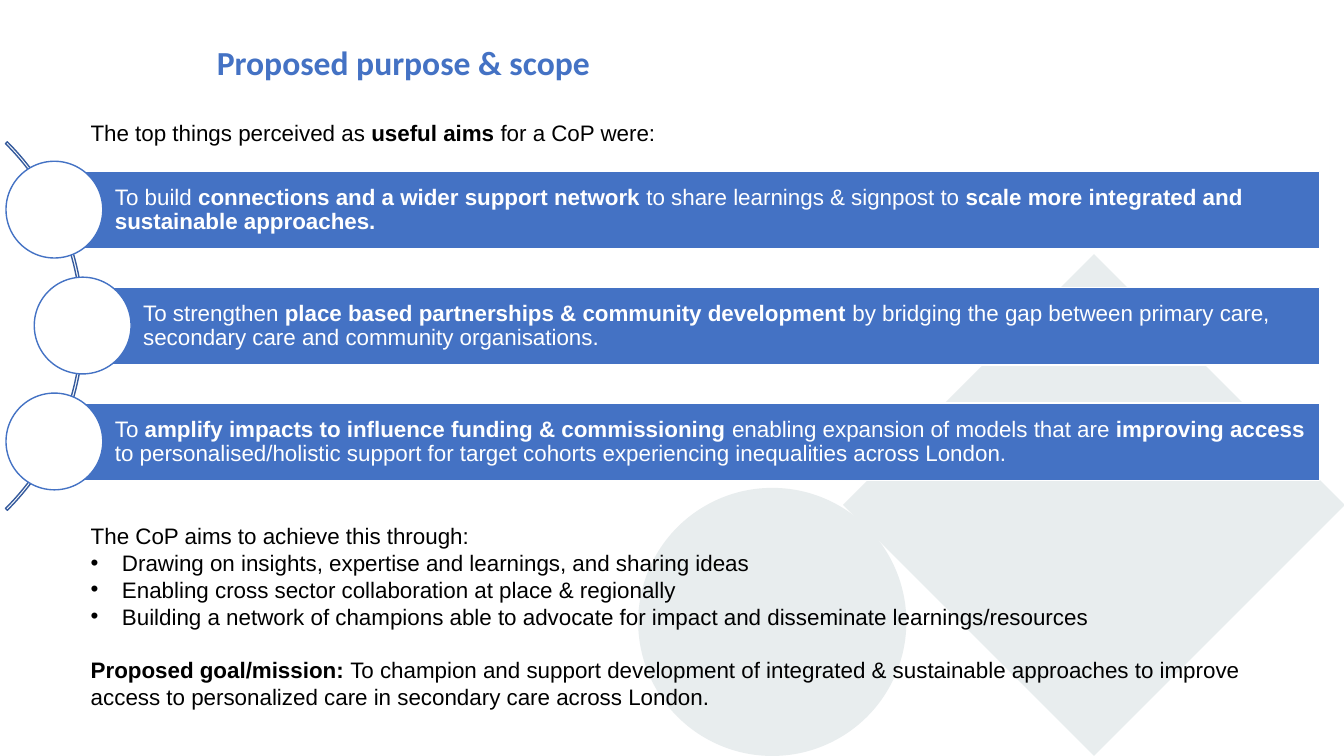
from lxml import etree
from pptx import Presentation
from pptx.dml.color import RGBColor
from pptx.enum.shapes import MSO_SHAPE
from pptx.enum.text import MSO_ANCHOR, MSO_AUTO_SIZE, PP_ALIGN
from pptx.oxml.ns import qn
from pptx.util import Emu, Pt

RECT, OVAL, ARC = MSO_SHAPE.RECTANGLE, MSO_SHAPE.OVAL, MSO_SHAPE.BLOCK_ARC
TOP, MIDDLE = MSO_ANCHOR.TOP, MSO_ANCHOR.MIDDLE
FIXED, LEFT = MSO_AUTO_SIZE.NONE, PP_ALIGN.LEFT

BLUE, DARK_BLUE, WHITE, BLACK, PALE = "4472C4", "365B9D", "FFFFFF", "000000", "E8EDEE"
TEXT = {"name": "Arial", "size": Pt(16)}
HEADING = {"name": "Calibri", "size": Pt(24)}


def px(length):
    """100 px to the inch."""
    return Emu(length * 9144)


def color(hex_string):
    return RGBColor.from_string(hex_string)


class SlideBuilder:
    def __init__(self, slide):
        self.slide = slide
        self.backdrop_count = 0

    def shape(self, preset, box, fill=None, line=None, rotation=0):
        item = self.slide.shapes.add_shape(preset, *map(px, box))
        item.shadow.inherit = False
        item.rotation = rotation
        if fill:
            item.fill.solid()
            item.fill.fore_color.rgb = color(fill)
        else:
            item.fill.background()
        if line:
            item.line.color.rgb = color(line)
            item.line.width = Pt(1)
        else:
            item.line.fill.background()
        return item

    def backdrop(self, preset, box, rotation=0):
        item = self.shape(preset, box, PALE, rotation=rotation)
        self.slide.shapes._spTree.insert(2 + self.backdrop_count, item._element)
        self.backdrop_count += 1

    def place(self, item, box):
        for side, length in zip(("left", "top", "width", "height"), box):
            setattr(item, side, px(length))

    def frame(self, item, wrap=True, anchor=TOP, insets=(10, 5, 10, 5)):
        settings = {"word_wrap": wrap, "auto_size": FIXED, "vertical_anchor": anchor}
        for side, inset in zip(("left", "top", "right", "bottom"), insets):
            settings["margin_" + side] = px(inset)
        for key, value in settings.items():
            setattr(item.text_frame, key, value)
        return item.text_frame

    def paragraph(self, frame, runs, style=TEXT, ink=BLACK, first=False,
                  bullet=False, margin=0, before=0, spacing=1.0):
        para = frame.paragraphs[0] if first else frame.add_paragraph()
        props = para._p.get_or_add_pPr()
        props.set("marL", str(px(margin)))
        props.set("indent", str(px(-margin if bullet else 0)))
        if bullet:
            etree.SubElement(props, qn("a:buFont")).set("typeface", "Arial")
            etree.SubElement(props, qn("a:buChar")).set("char", "•")
        else:
            etree.SubElement(props, qn("a:buNone"))
        layout = {"alignment": LEFT, "space_before": Pt(before),
                  "space_after": Pt(0), "line_spacing": spacing}
        for key, value in layout.items():
            setattr(para, key, value)
        for words, bold in runs:
            run = para.add_run()
            run.text = words
            for key, value in {**style, "bold": bold}.items():
                setattr(run.font, key, value)
            run.font.color.rgb = color(ink)

    def aim(self, left, top, runs):
        bar = self.shape(RECT, (left, top, 1309 - left, 77), BLUE, WHITE)
        frame = self.frame(bar, anchor=MIDDLE, insets=(61, 4, 4, 4))
        self.paragraph(frame, runs, ink=WHITE, first=True, spacing=0.9)
        self.shape(OVAL, (left - 47, top - 10, 96, 96), WHITE, BLUE)


AIMS = [
    [("To build ", False), ("connections and a wider support network ", True),
     ("to share learnings & signpost to ", False),
     ("scale more integrated and sustainable approaches.", True)],
    [("To strengthen ", False),
     ("place based partnerships & community development ", True),
     ("by bridging the gap between primary care, secondary care and "
      "community organisations.", False)],
    [("To ", False), ("amplify impacts to influence funding & commissioning ", True),
     ("enabling expansion of models that are", False), (" improving access", True),
     (" to personalised/holistic support for target cohorts experiencing "
      "inequalities across London.", False)],
]
METHODS = [
    "Drawing on insights, expertise and learnings, and sharing ideas",
    "Enabling cross sector collaboration at place & regionally",
    "Building a network of champions able to advocate for impact and "
    "disseminate learnings/resources",
]


def main():
    deck = Presentation()
    deck.slide_width, deck.slide_height = px(1333), px(750)
    slide = deck.slides.add_slide(deck.slide_layouts[1])
    builder = SlideBuilder(slide)

    # Backdrop
    builder.backdrop(OVAL, (633, 484, 266, 266))
    builder.backdrop(RECT, (909, 325, 352, 352), rotation=45)

    # Title
    title = slide.shapes.title
    builder.place(title, (195, 37, 404, 50))
    builder.paragraph(builder.frame(title, wrap=False),
                      [("Proposed purpose & scope", True)],
                      HEADING, BLUE, first=True, margin=10)

    # Introduction
    intro = slide.shapes.add_textbox(*map(px, (80, 113, 1219, 37)))
    builder.paragraph(builder.frame(intro),
                      [("The top things perceived as ", False), ("useful aims ", True),
                       ("for a CoP were:", False)], first=True)

    # Methods and mission
    methods = slide.placeholders[1]
    builder.place(methods, (80, 513, 1219, 233))
    frame = builder.frame(methods)
    builder.paragraph(frame, [("The CoP aims to achieve this through:", False)], first=True)
    for method in METHODS:
        builder.paragraph(frame, [(method, False)], bullet=True, margin=31)
    builder.paragraph(frame, [
        ("Proposed goal/mission: ", True),
        ("To champion and support development of integrated & sustainable approaches "
         "to improve access to personalized care in secondary care across London.", False),
    ], before=19)

    # Aims along the arc
    arc = builder.shape(ARC, (-434, 65, 517, 517), line=DARK_BLUE)
    for index, value in enumerate((189, 27, 0.005)):
        arc.adjustments[index] = value
    for row, runs in enumerate(AIMS):
        builder.aim(81 if row == 1 else 53, 170 + 115 * row, runs)

    deck.save("out.pptx")


if __name__ == "__main__":
    main()
